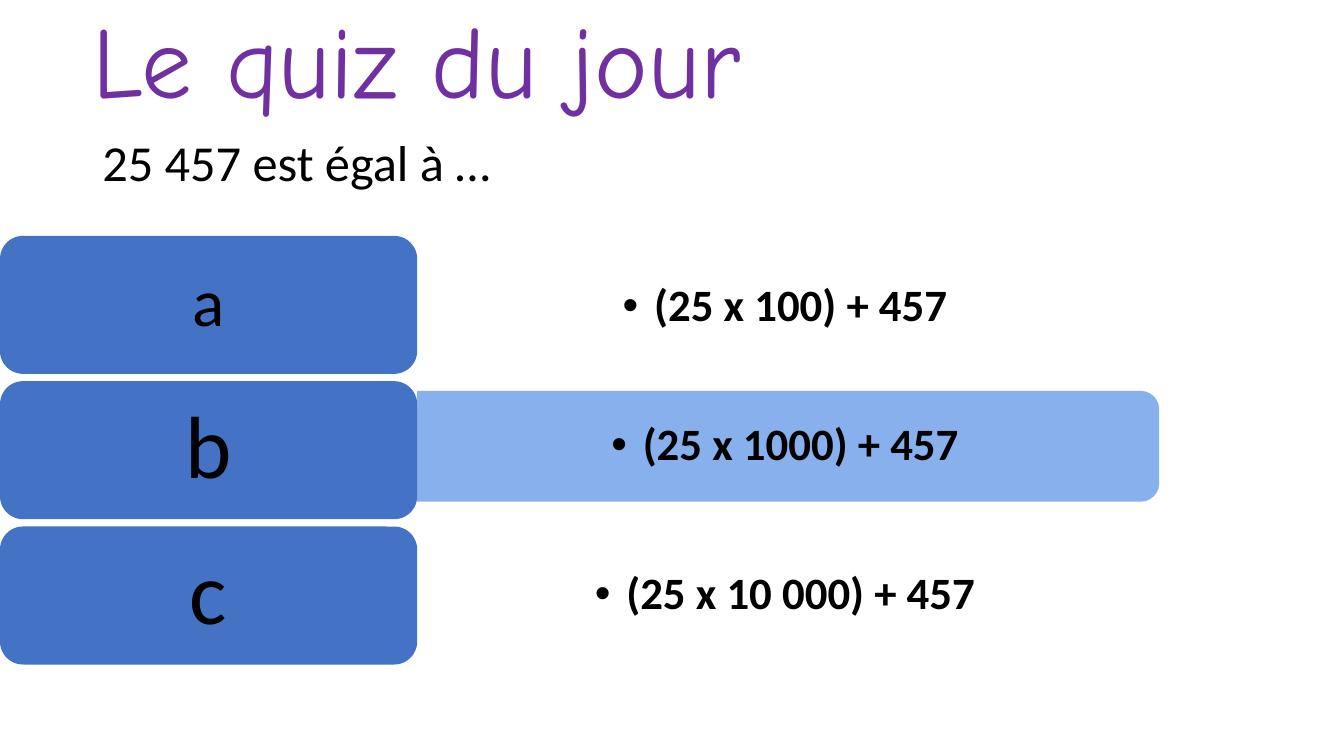
from dataclasses import dataclass
from typing import Any

from lxml.etree import SubElement
from pptx import Presentation
from pptx.dml.color import RGBColor
from pptx.enum.shapes import MSO_SHAPE
from pptx.enum.text import MSO_ANCHOR, PP_ALIGN
from pptx.oxml.ns import qn
from pptx.util import Pt


@dataclass(frozen=True)
class Theme:
    title: str = "7030A0"
    text: str = "000000"
    label: str = "4472C4"
    band: str = "FFFFFF"
    highlight: str = "7CA8EA"
    title_font: str = "Comic Neue"
    body_font: str = "Calibri"
    title_size: float = 72.5
    question_size: float = 36
    answer_size: float = 32


@dataclass(frozen=True)
class Box:
    left: float
    top: float
    width: float
    height: float

    def emu(self) -> tuple[Pt, Pt, Pt, Pt]:
        return Pt(self.left), Pt(self.top), Pt(self.width), Pt(self.height)


@dataclass(frozen=True)
class Choice:
    letter: str
    letter_size: float
    answer: str
    band_middle: float
    band_color: str


THEME = Theme()
LABEL = Box(0, 168.5, 298, 98.6)
ROW_PITCH = 103.8
BAND_WIDTH, BAND_HEIGHT = 530, 79.2
ANSWER_WIDTH, ANSWER_HEIGHT = 525.6, 71.3
BULLET_INDENT = 22.5
CHOICES = [
    Choice("a", 48, "(25 x 100) + 457", 219.4, THEME.band),
    Choice("b", 63, "(25 x 1000) + 457", 318.8, THEME.highlight),
    Choice("c", 63, "(25 x 10 000) + 457", 425.3, THEME.band),
]


def apply(target: Any, values: dict[str, Any]) -> None:
    for name, value in values.items():
        setattr(target, name, value)


def write(sp: Any, text: str, size: float, font: str = THEME.body_font,
          color: str = THEME.text, bold: bool = False,
          align: PP_ALIGN = PP_ALIGN.CENTER, spacing: float = 0.9,
          frame: dict[str, Any] | None = None) -> Any:
    tf = sp.text_frame
    apply(tf, {"word_wrap": True, "vertical_anchor": MSO_ANCHOR.MIDDLE} | (frame or {}))
    p = tf.paragraphs[0]
    apply(p, {"alignment": align, "line_spacing": spacing})
    r = p.add_run()
    r.text = text
    apply(r.font, {"name": font, "size": Pt(size), "bold": bold})
    r.font.color.rgb = RGBColor.from_string(color)
    return p


def add_filled(s: Any, kind: MSO_SHAPE, box: Box, color: str) -> Any:
    sp = s.shapes.add_shape(kind, *box.emu())
    sp.shadow.inherit = False
    sp.fill.solid()
    sp.fill.fore_color.rgb = RGBColor.from_string(color)
    sp.line.fill.background()
    return sp


def add_band(s: Any, choice: Choice) -> None:
    center = LABEL.width + BAND_WIDTH / 2
    box = Box(center - BAND_HEIGHT / 2, choice.band_middle - BAND_WIDTH / 2,
              BAND_HEIGHT, BAND_WIDTH)
    sp = add_filled(s, MSO_SHAPE.ROUND_2_SAME_RECTANGLE, box, choice.band_color)
    sp.rotation = 90
    clr = sp.fill._xPr.find(qn("a:solidFill")).find(qn("a:srgbClr"))
    SubElement(clr, qn("a:alpha"), val="90000")


def add_answer(s: Any, choice: Choice) -> None:
    box = Box(LABEL.width, choice.band_middle - ANSWER_HEIGHT / 2,
              ANSWER_WIDTH, ANSWER_HEIGHT)
    sp = s.shapes.add_textbox(*box.emu())
    p = write(sp, choice.answer, THEME.answer_size, bold=True, frame={
        "margin_left": Pt(19.2), "margin_right": Pt(19.2),
        "margin_top": Pt(9.6), "margin_bottom": Pt(9.6)})
    p.level = 1
    pPr = p._p.get_or_add_pPr()
    pPr.set("marL", str(Pt(BULLET_INDENT)))
    pPr.set("indent", str(-Pt(BULLET_INDENT)))
    SubElement(pPr, qn("a:buFont"), typeface="Arial")
    SubElement(pPr, qn("a:buChar"), char="•")


def add_choice(s: Any, index: int, choice: Choice) -> None:
    add_band(s, choice)
    add_answer(s, choice)
    box = Box(LABEL.left, LABEL.top + index * ROW_PITCH, LABEL.width, LABEL.height)
    sp = add_filled(s, MSO_SHAPE.ROUNDED_RECTANGLE, box, THEME.label)
    write(sp, choice.letter, choice.letter_size)


def main() -> None:
    prs = Presentation()
    apply(prs, {"slide_width": Pt(960), "slide_height": Pt(540)})
    s = prs.slides.add_slide(prs.slide_layouts[6])

    title = s.shapes.add_textbox(*Box(66, 19.5, 828, 82.8).emu())
    write(title, "Le quiz du jour", THEME.title_size, THEME.title_font, THEME.title,
          align=PP_ALIGN.LEFT, frame={"margin_left": 0, "margin_right": 0,
                                      "margin_top": 0, "margin_bottom": Pt(28)})

    for index, choice in enumerate(CHOICES):
        add_choice(s, index, choice)

    question = s.shapes.add_textbox(*Box(66, 90, 762, 51).emu())
    write(question, "25 457 est égal à …", THEME.question_size,
          align=PP_ALIGN.LEFT, spacing=1.0, frame={"vertical_anchor": MSO_ANCHOR.TOP})

    prs.save("out.pptx")


if __name__ == "__main__":
    main()
